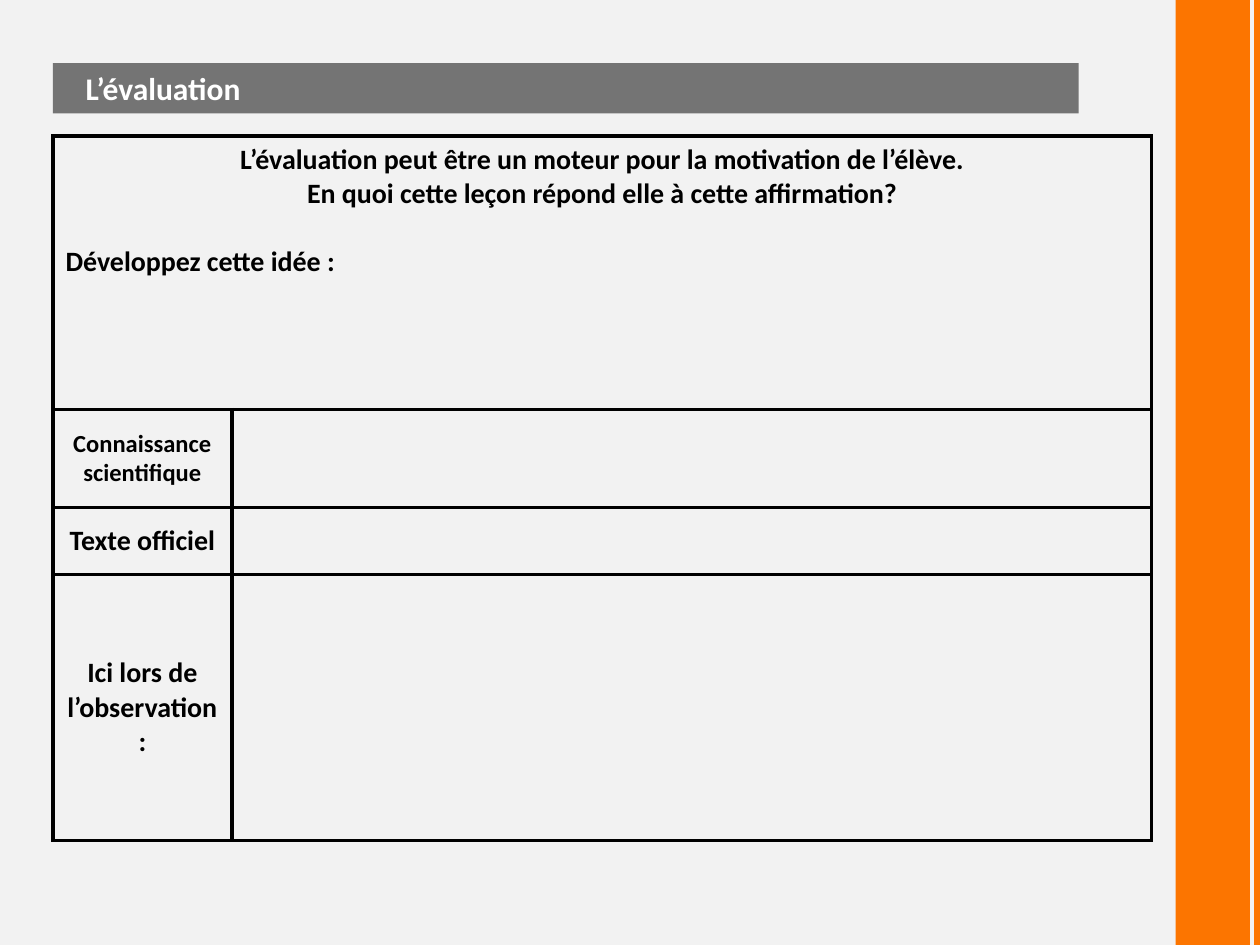
from lxml import etree
from pptx import Presentation
from pptx.dml.color import RGBColor
from pptx.enum import shapes, text
from pptx.oxml import ns
from pptx.util import Inches, Pt

ORANGE = RGBColor(0xFC, 0x75, 0x00)
DARK = RGBColor(0x0D, 0x0D, 0x0D)
PALE = RGBColor(0xF2, 0xF2, 0xF2)
WHITE = RGBColor(0xFF, 0xFF, 0xFF)
BLACK = RGBColor(0, 0, 0)
FONT = "Calibri"
LEFT = Inches(0.42)
COLS = (1.42, 7.3)
ROWS = (2.17, 0.78, 0.53, 2.11)
LABELS = (
    ("Connaissance scientifique", 14),
    ("Texte officiel", 16),
    ("Ici lors de l’observation:", 16),
)


def add_run(para, words, size, color):
    run = para.add_run()
    run.text = words
    font = run.font
    font.name, font.size, font.bold = FONT, Pt(size), True
    font.color.rgb = color


def add_side(slide):
    band = slide.shapes.add_shape(
        shapes.MSO_SHAPE.RECTANGLE, Inches(9.33), 0, Inches(0.59), Inches(7.5))
    band.shadow.inherit = False
    band.fill.solid()
    band.fill.fore_color.rgb = ORANGE
    band.line.fill.background()
    edge = slide.shapes.add_connector(
        shapes.MSO_CONNECTOR.STRAIGHT, Inches(9.98), 0, Inches(9.98), Inches(7.5))
    edge.line.color.rgb = ORANGE
    edge.line.width = Pt(4)
    etree.SubElement(edge._element.spPr, ns.qn("a:effectLst"))


def set_title(slide):
    title = slide.shapes.title
    title.left, title.top = LEFT, Inches(0.5)
    title.width, title.height = Inches(8.14), Inches(0.4)
    title.fill.solid()
    title.fill.fore_color.rgb = DARK
    tint = title._element.spPr.find(".//" + ns.qn("a:srgbClr"))
    etree.SubElement(tint, ns.qn("a:alpha"), val="55000")
    frame = title.text_frame
    frame.auto_size = text.MSO_AUTO_SIZE.NONE
    frame.vertical_anchor = text.MSO_ANCHOR.MIDDLE
    frame.margin_left = Inches(0.26)
    para = frame.paragraphs[0]
    para.alignment = text.PP_ALIGN.LEFT
    add_run(para, "L’évaluation", 18, WHITE)


def style_cell(cell):
    props = cell._tc.get_or_add_tcPr()
    for side in ("lnL", "lnR", "lnT", "lnB"):
        line = etree.SubElement(props, ns.qn("a:" + side), w=str(Pt(2.25)))
        fill = etree.SubElement(line, ns.qn("a:solidFill"))
        etree.SubElement(fill, ns.qn("a:srgbClr"), val=str(BLACK))
    cell.fill.background()
    cell.vertical_anchor = text.MSO_ANCHOR.MIDDLE


def fill_prompt(cell):
    cell.vertical_anchor = text.MSO_ANCHOR.TOP
    para = cell.text_frame.paragraphs[0]
    para.alignment = text.PP_ALIGN.CENTER
    add_run(para, "L’évaluation peut être un moteur pour la motivation de l’élève.", 16, BLACK)
    para.add_line_break()
    add_run(para, "En quoi cette leçon répond elle à cette affirmation?", 16, BLACK)
    para = cell.text_frame.add_paragraph()
    para.space_before = Pt(19.5)
    add_run(para, "Développez cette idée :", 16, BLACK)


def add_grid(slide):
    table = slide.shapes.add_table(
        len(ROWS), len(COLS), LEFT, Inches(1.08),
        Inches(sum(COLS)), Inches(sum(ROWS))).table
    table.first_row = table.horz_banding = False
    for col, width in zip(table.columns, COLS):
        col.width = Inches(width)
    for row, height in zip(table.rows, ROWS):
        row.height = Inches(height)
    for cell in table.iter_cells():
        style_cell(cell)
    table.cell(0, 0).merge(table.cell(0, 1))
    fill_prompt(table.cell(0, 0))
    for index, (label, size) in enumerate(LABELS, 1):
        para = table.cell(index, 0).text_frame.paragraphs[0]
        para.alignment = text.PP_ALIGN.CENTER
        add_run(para, label, size, BLACK)


def main():
    deck = Presentation()
    deck.slide_width, deck.slide_height = Inches(10), Inches(7.5)
    slide = deck.slides.add_slide(deck.slide_layouts[5])
    slide.background.fill.solid()
    slide.background.fill.fore_color.rgb = PALE
    add_side(slide)
    set_title(slide)
    add_grid(slide)
    deck.save("out.pptx")


if __name__ == "__main__":
    main()
